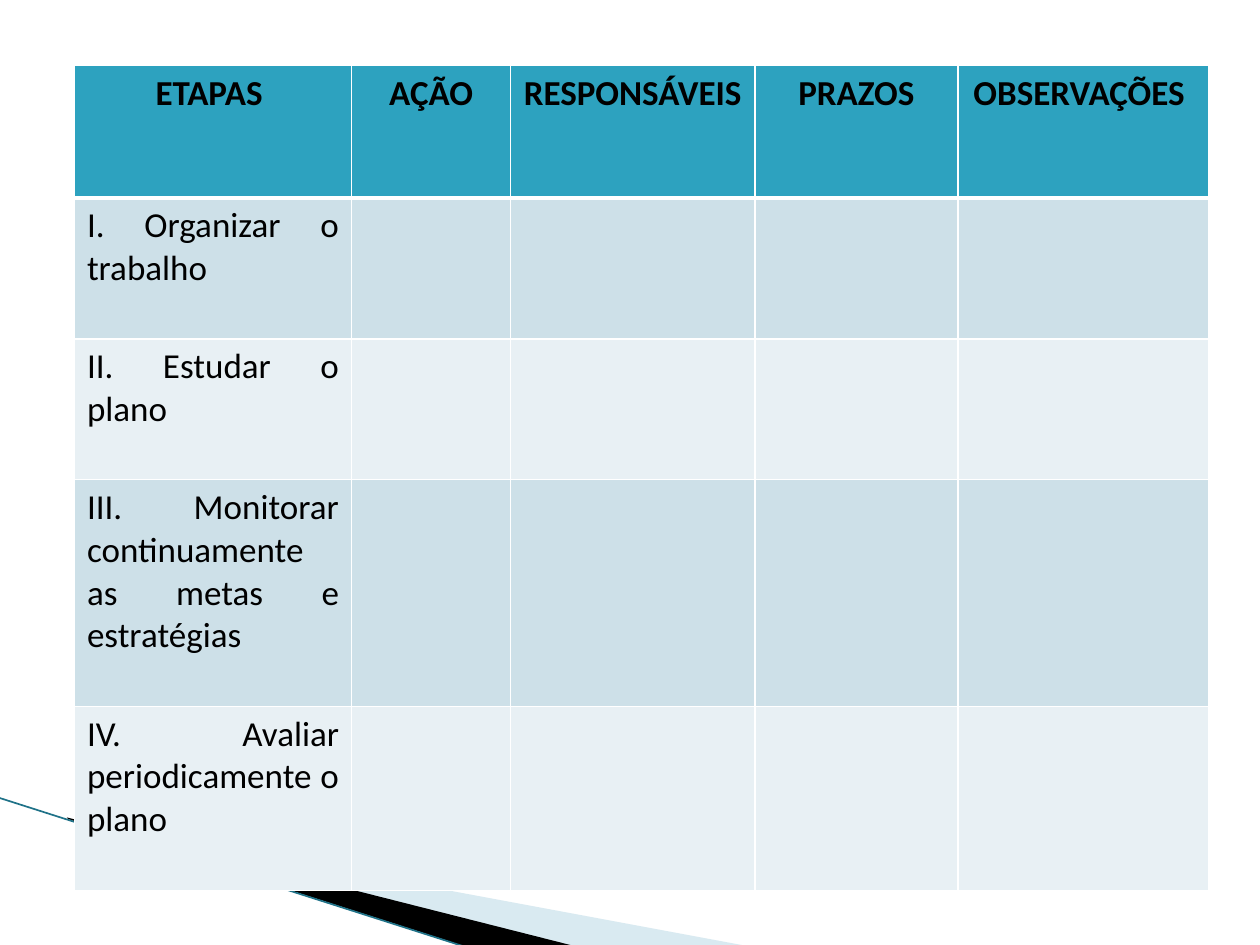
import pptx
import pptx.dml.color
import pptx.enum.shapes
import pptx.enum.text
import pptx.oxml
import pptx.oxml.ns
import pptx.util
from lxml import etree

Cm = pptx.util.Cm
Align = pptx.enum.text.PP_ALIGN
HEADINGS = ["ETAPAS ", "AÇÃO", "RESPONSÁVEIS", "PRAZOS", "OBSERVAÇÕES "]
STAGES = [
    "I. Organizar o trabalho ",
    "II. Estudar o plano ",
    "III. Monitorar continuamente as metas e estratégias ",
    "IV. Avaliar periodicamente o plano ",
]
COLUMN_WIDTHS = [5.59, 3.2, 4.93, 4.09, 5.05]
ROW_HEIGHTS = [2.67, 2.84, 2.84, 4.57, 3.71]


def colour(value):
    return pptx.dml.color.RGBColor.from_string(value)


def add_element(parent, tag, **attributes):
    return etree.SubElement(parent, pptx.oxml.ns.qn(tag), attributes)


def write(frame, text, align=Align.LEFT, bold=False, size=20, font="Calibri", ink="000000"):
    para = frame.paragraphs[0]
    para.alignment = align
    span = para.add_run()
    span.text = text
    span.font.name = font
    span.font.size = pptx.util.Pt(size)
    span.font.bold = bold
    span.font.color.rgb = colour(ink)


class PlanPage:
    header = "2DA2BF"
    bands = ["CDE0E8", "E8F0F4"]
    border = "FFFFFF"

    def __init__(self, deck):
        self.page = deck.slides.add_slide(deck.slide_layouts[6])

    def wedge(self, points, fill, opacity=100):
        corners = [(Cm(x), Cm(y)) for x, y in points]
        builder = self.page.shapes.build_freeform(*corners[0])
        builder.add_line_segments(corners[1:], close=True)
        shape = builder.convert_to_shape()
        shape.shadow.inherit = False
        shape.fill.solid()
        shape.fill.fore_color.rgb = colour(fill)
        shape.line.fill.background()
        if opacity < 100:
            tint = shape.fill._xPr.find(".//" + pptx.oxml.ns.qn("a:srgbClr"))
            add_element(tint, "a:alpha", val=str(opacity * 1000))

    def line(self, start, end, ink, width):
        connector = self.page.shapes.add_connector(
            pptx.enum.shapes.MSO_CONNECTOR.STRAIGHT, *map(Cm, start + end))
        connector.line.color.rgb = colour(ink)
        connector.line.width = pptx.util.Pt(width)
        add_element(connector._element.spPr, "a:effectLst")

    def paint_cell(self, cell, fill, bottom):
        properties = cell._tc.get_or_add_tcPr()
        for side, width in (("L", 1), ("R", 1), ("T", 1), ("B", bottom)):
            edge = add_element(properties, "a:ln" + side, w=str(pptx.util.Pt(width)))
            add_element(add_element(edge, "a:solidFill"), "a:srgbClr", val=self.border)
        cell.fill.solid()
        cell.fill.fore_color.rgb = colour(fill)

    def table(self, left, top, widths, heights, headings, stages):
        table = self.page.shapes.add_table(
            len(heights), len(widths), Cm(left), Cm(top),
            Cm(sum(widths)), Cm(sum(heights))).table
        for column, width in zip(table.columns, widths):
            column.width = Cm(width)
        for index, (row, height) in enumerate(zip(table.rows, heights)):
            row.height = Cm(height)
            fill = self.bands[(index - 1) % 2] if index else self.header
            for cell in row.cells:
                self.paint_cell(cell, fill, 1 if index else 3)
        for index, heading in enumerate(headings):
            write(table.cell(0, index).text_frame, heading, align=Align.CENTER, bold=True)
        for index, stage in enumerate(stages, 1):
            write(table.cell(index, 0).text_frame, stage, align=Align.JUSTIFY)


def main():
    deck = pptx.Presentation()
    deck.slide_width, deck.slide_height = Cm(25.4), Cm(19.05)
    plan = PlanPage(deck)
    plan.wedge([(1.4, 16.53), (15.11, 19.08), (11.58, 19.08), (1.4, 16.51)], "A0CBDC", opacity=40)
    plan.wedge([(1.35, 16.48), (11.61, 19.08), (9.45, 19.1), (1.37, 16.51)], "000000")
    plan.line((-0.03, 16.08), (9.42, 19.1), "1F7288", 0.95)
    plan.table(1.5, 1.32, COLUMN_WIDTHS, ROW_HEIGHTS, HEADINGS, STAGES)
    deck.save("out.pptx")


if __name__ == "__main__":
    main()
